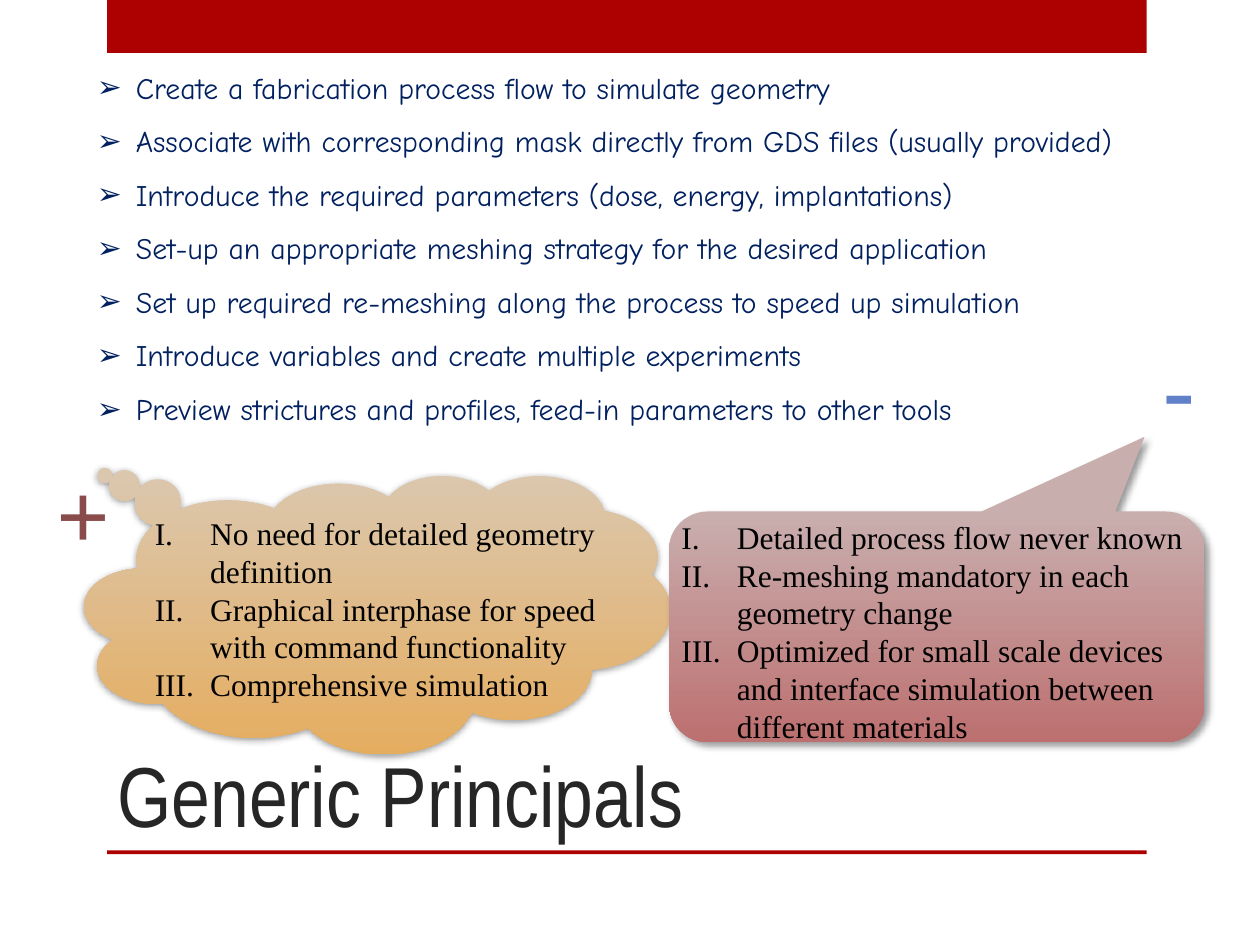
from dataclasses import dataclass

from lxml import etree
from pptx import Presentation
from pptx import util as u
from pptx.dml.color import RGBColor
from pptx.enum import shapes, text
from pptx.oxml.ns import qn

COLUMNS, ROWS = 100, 75  # grid cells of a tenth of an inch


@dataclass(frozen=True)
class Theme:
    red: str = "AD0101"
    ink: str = "262626"
    navy: str = "002060"
    black: str = "000000"
    plus: str = "894C4B"
    minus: str = "6081C9"
    sand: tuple = ("DBC7AD", "E5AD60")
    rose: tuple = ("C9AEAE", "BD7070")
    heading: str = "Arial Narrow"
    steps: str = "Comic Neue"
    notes: str = "Times New Roman"
    title_size: float = 48.6
    step_size: float = 17
    note_size: float = 18
    sign_size: float = 54


def write(para, wording, font, size, color, bold=False, align=text.PP_ALIGN.LEFT):
    """Put one formatted run into a paragraph."""
    para.alignment = align
    span = para.add_run()
    span.text = wording
    span.font.name, span.font.size, span.font.bold = font, u.Pt(size), bold
    span.font.color.rgb = RGBColor.from_string(color)


def hang(para, indent, tag, **mark):
    """Give a paragraph a hanging bullet or number."""
    props = para._p.get_or_add_pPr()
    props.set("marL", str(u.Inches(indent)))
    props.set("indent", str(-u.Inches(indent)))
    etree.SubElement(props, qn("a:buFont"), typeface="+mj-lt" if tag == "a:buAutoNum" else "Arial")
    etree.SubElement(props, qn(tag), **mark)


class SlideBuilder:
    def __init__(self, deck, theme):
        self.theme = theme
        self.cell_width = deck.slide_width / COLUMNS
        self.cell_height = deck.slide_height / ROWS
        self.slide = deck.slides.add_slide(deck.slide_layouts[5])

    def place(self, left, top, width, height):
        return (round(left * self.cell_width), round(top * self.cell_height),
                round(width * self.cell_width), round(height * self.cell_height))

    def title(self, wording, *area):
        box = self.slide.shapes.title
        box.left, box.top, box.width, box.height = self.place(*area)
        frame = box.text_frame
        frame.vertical_anchor = text.MSO_ANCHOR.BOTTOM
        frame.auto_size = text.MSO_AUTO_SIZE.NONE
        write(frame.paragraphs[0], wording, self.theme.heading,
              self.theme.title_size, self.theme.ink)

    def shape(self, kind, *area):
        shape = self.slide.shapes.add_shape(kind, *self.place(*area))
        shape.shadow.inherit = False
        shape.line.fill.background()
        return shape

    def bar(self, *area):
        bar = self.shape(shapes.MSO_SHAPE.RECTANGLE, *area)
        bar.fill.solid()
        bar.fill.fore_color.rgb = RGBColor.from_string(self.theme.red)

    def callout(self, kind, *area, adjust, colors, distance, direction):
        callout = self.shape(kind, *area)
        for index, value in enumerate(adjust):
            callout.adjustments[index] = value
        callout.fill.gradient()
        callout.fill.gradient_angle = 270
        for stop, color, position in zip(callout.fill.gradient_stops, colors, (0, 1)):
            stop.color.rgb = RGBColor.from_string(color)
            stop.position = position
        # Soft outer shadow
        effects = callout._element.spPr.find(qn("a:effectLst"))
        shadow = etree.SubElement(
            effects, qn("a:outerShdw"), blurRad=str(u.Pt(4)), dist=str(u.Pt(distance)),
            dir=str(direction * 60000), algn="tl", rotWithShape="0")
        tint = etree.SubElement(shadow, qn("a:srgbClr"), val=self.theme.black)
        etree.SubElement(tint, qn("a:alpha"), val="40000")

    def frame(self, *area, wrap=True):
        frame = self.slide.shapes.add_textbox(*self.place(*area)).text_frame
        frame.word_wrap = wrap
        frame.auto_size = text.MSO_AUTO_SIZE.SHAPE_TO_FIT_TEXT
        return frame

    def items(self, lines, *area, font, size, color, indent, tag, mark, spacing=1.0):
        frame = self.frame(*area)
        for index, line in enumerate(lines):
            para = frame.add_paragraph() if index else frame.paragraphs[0]
            para.line_spacing = spacing
            hang(para, indent, tag, **mark)
            write(para, line, font, size, color)

    def steps(self, lines, *area):
        self.items(lines, *area, font=self.theme.steps, size=self.theme.step_size,
                   color=self.theme.navy, indent=0.31, tag="a:buChar",
                   mark={"char": "➢"}, spacing=1.5)

    def numbered(self, lines, *area):
        self.items(lines, *area, font=self.theme.notes, size=self.theme.note_size,
                   color=self.theme.black, indent=0.44, tag="a:buAutoNum",
                   mark={"type": "romanUcPeriod"})

    def sign(self, wording, color, *area):
        write(self.frame(*area, wrap=False).paragraphs[0], wording, self.theme.notes,
              self.theme.sign_size, color, bold=True, align=text.PP_ALIGN.CENTER)


def main():
    deck = Presentation()
    deck.slide_width, deck.slide_height = u.Inches(10), u.Inches(7.5)
    theme = Theme()
    page = SlideBuilder(deck, theme)

    # Red frame bars and title
    page.bar(8.5, 0, 82.5, 4.2)
    page.bar(8.5, 67.5, 82.5, 0.3)
    page.title("Generic Principals", 8.3, 58, 74.2, 9.5)

    # Process steps
    page.steps([
        "Create a fabrication process flow to simulate geometry",
        "Associate with corresponding mask directly from GDS files (usually provided)",
        "Introduce the required parameters (dose, energy, implantations)",
        "Set-up an appropriate meshing strategy for the desired application",
        "Set up required re-meshing along the process to speed up simulation",
        "Introduce variables and create multiple experiments",
        "Preview strictures and profiles, feed-in parameters to other tools",
    ], 6.7, 3.6, 86.6, 35.3)

    # Plus and minus signs
    page.sign("+", theme.plus, 3.5, 35.6, 6.3, 10.1)
    page.sign("-", theme.minus, 91.3, 25.5, 4.5, 10.1)

    # Advantages
    page.callout(shapes.MSO_SHAPE.CLOUD_CALLOUT, 6.7, 37.7, 46.5, 22.1,
                 adjust=(-0.465, -0.498), colors=theme.sand, distance=1, direction=88)
    page.numbered([
        "No need for detailed geometry definition",
        "Graphical interphase for speed with command functionality",
        "Comprehensive simulation",
    ], 11.3, 40.3, 38.8, 16.2)

    # Drawbacks
    page.callout(shapes.MSO_SHAPE.ROUNDED_RECTANGULAR_CALLOUT, 53.1, 40.6, 42.5, 18.3,
                 adjust=(0.388, -0.824, 0.167), colors=theme.rose, distance=3, direction=45)
    page.numbered([
        "Detailed process flow never known",
        "Re-meshing mandatory in each geometry change",
        "Optimized for small scale devices and interface simulation between "
        "different materials",
    ], 53.1, 40.6, 43.6, 19.2)

    deck.save("out.pptx")


if __name__ == "__main__":
    main()
